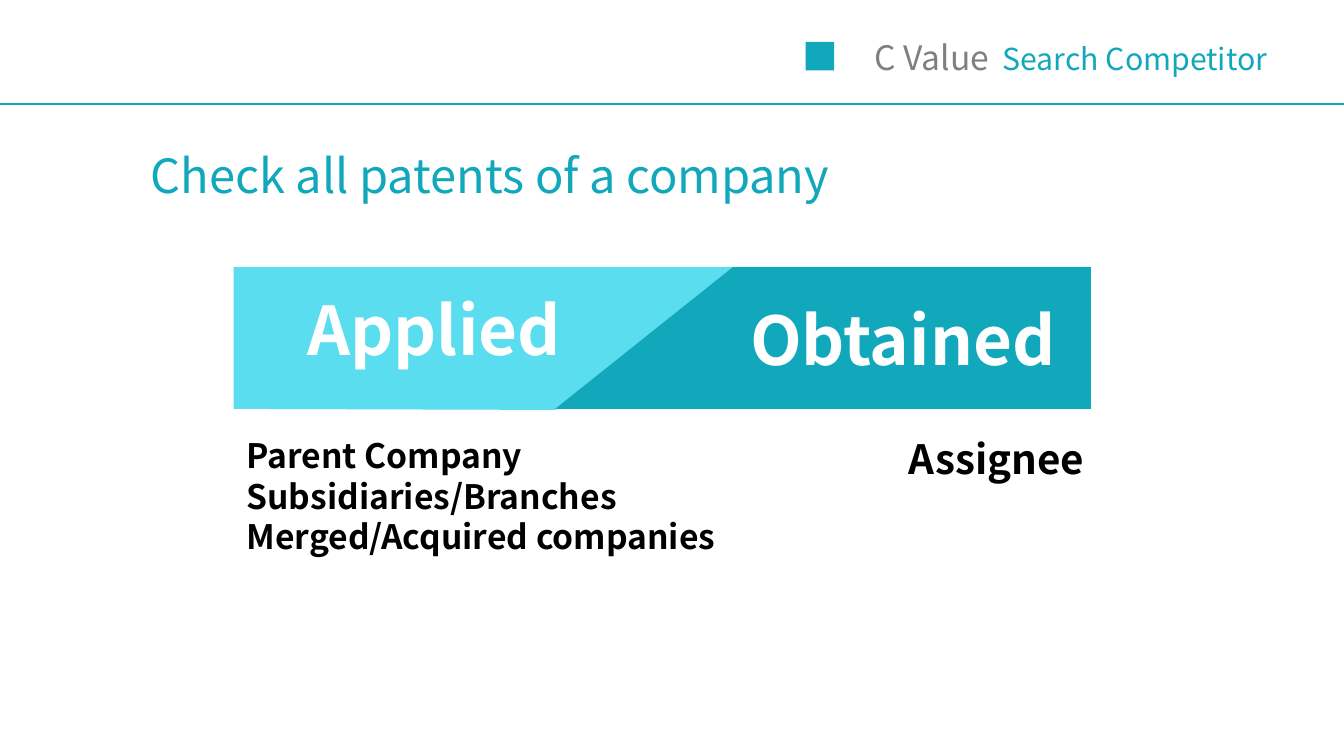
from dataclasses import dataclass

from lxml import etree
from pptx import Presentation
from pptx.dml.color import RGBColor as Rgb
from pptx.enum import shapes, text
from pptx.oxml import ns
from pptx.util import Pt


@dataclass(frozen=True)
class Theme:
    font: str = "Noto Sans CJK SC"
    teal: str = "12A8BC"
    aqua: str = "59DDEF"
    grey: str = "7F7F7F"
    black: str = "000000"
    white: str = "FFFFFF"
    small: float = 18
    body: float = 20
    label: float = 24
    title: float = 28
    banner: float = 40


@dataclass(frozen=True)
class Label:
    lines: tuple[str, ...]
    left: float
    top: float
    width: float
    height: float
    size: float
    color: str
    bold: bool = False
    align: text.PP_ALIGN = text.PP_ALIGN.LEFT


@dataclass(frozen=True)
class Panel:
    points: tuple[tuple[float, float], ...]
    color: str


THEME = Theme()
ALIGN = text.PP_ALIGN
TOP, BASE = 159, 243.4

PANELS = (
    Panel(((139, TOP), (439, TOP), (330.5, 244), (139, BASE)), THEME.aqua),
    Panel(((436.3, TOP), (649.4, TOP), (649.4, BASE), (330.5, BASE)), THEME.teal),
)

LABELS = (
    Label(("Check all patents of a company",), 82.8, 83.5, 460, 41,
          THEME.title, THEME.teal),
    Label(("Parent Company Subsidiaries/Branches", "Merged/Acquired companies"),
          139.7, 255.6, 314, 80, THEME.body, THEME.black, True),
    Label(("Assignee",), 456.5, 254.9, 196, 36.7,
          THEME.label, THEME.black, True, ALIGN.RIGHT),
    Label(("Applied",), 172, 167.8, 172.8, 55.4,
          THEME.banner, THEME.white, True, ALIGN.CENTER),
    Label(("Obtained",), 429.7, 174.2, 215.3, 55.4,
          THEME.banner, THEME.white, True, ALIGN.CENTER),
)


def paint(shape, color: str) -> None:
    shape.shadow.inherit = False
    shape.fill.solid()
    shape.fill.fore_color.rgb = Rgb.from_string(color)
    shape.line.fill.background()


def add_frame(slide, left: float, top: float, width: float, height: float):
    box = slide.shapes.add_textbox(Pt(left), Pt(top), Pt(width), Pt(height))
    box.text_frame.word_wrap = True
    return box.text_frame


def add_label(slide, label: Label) -> None:
    frame = add_frame(slide, label.left, label.top, label.width, label.height)
    frame.text = "\n".join(label.lines)
    for para in frame.paragraphs:
        para.alignment = label.align
        para.font.name = THEME.font
        para.font.size = Pt(label.size)
        para.font.bold = label.bold
        para.font.color.rgb = Rgb.from_string(label.color)


def add_panel(slide, panel: Panel) -> None:
    first, *rest = [(Pt(x), Pt(y)) for x, y in panel.points]
    pen = slide.shapes.build_freeform(*first)
    pen.add_line_segments(rest, close=True)
    paint(pen.convert_to_shape(), panel.color)


def add_header(slide) -> None:
    rule = slide.shapes.add_connector(
        shapes.MSO_CONNECTOR.STRAIGHT, Pt(0), Pt(62), Pt(800), Pt(62))
    rule.line.color.rgb = Rgb.from_string(THEME.teal)
    rule.line.width = Pt(1)
    etree.SubElement(rule._element.spPr, ns.qn("a:effectLst"))

    mark = slide.shapes.add_shape(
        shapes.MSO_SHAPE.RECTANGLE, Pt(479.5), Pt(25), Pt(17), Pt(17))
    paint(mark, THEME.teal)

    para = add_frame(slide, 513.4, 18.7, 269.3, 31.7).paragraphs[0]
    tabs = etree.SubElement(para._p.get_or_add_pPr(), ns.qn("a:tabLst"))
    etree.SubElement(tabs, ns.qn("a:tab"), pos=str(Pt(76.3)), algn="l")
    para.font.name = THEME.font
    for words, size, color in (
        ("C Value\t", THEME.body, THEME.grey),
        ("Search Competitor", THEME.small, THEME.teal),
    ):
        run = para.add_run()
        run.text = words
        run.font.size = Pt(size)
        run.font.color.rgb = Rgb.from_string(color)


def main() -> None:
    deck = Presentation()
    deck.slide_width, deck.slide_height = Pt(800), Pt(450)
    slide = deck.slides.add_slide(deck.slide_layouts[6])
    add_header(slide)
    for panel in PANELS:
        add_panel(slide, panel)
    for label in LABELS:
        add_label(slide, label)
    deck.save("out.pptx")


if __name__ == "__main__":
    main()
